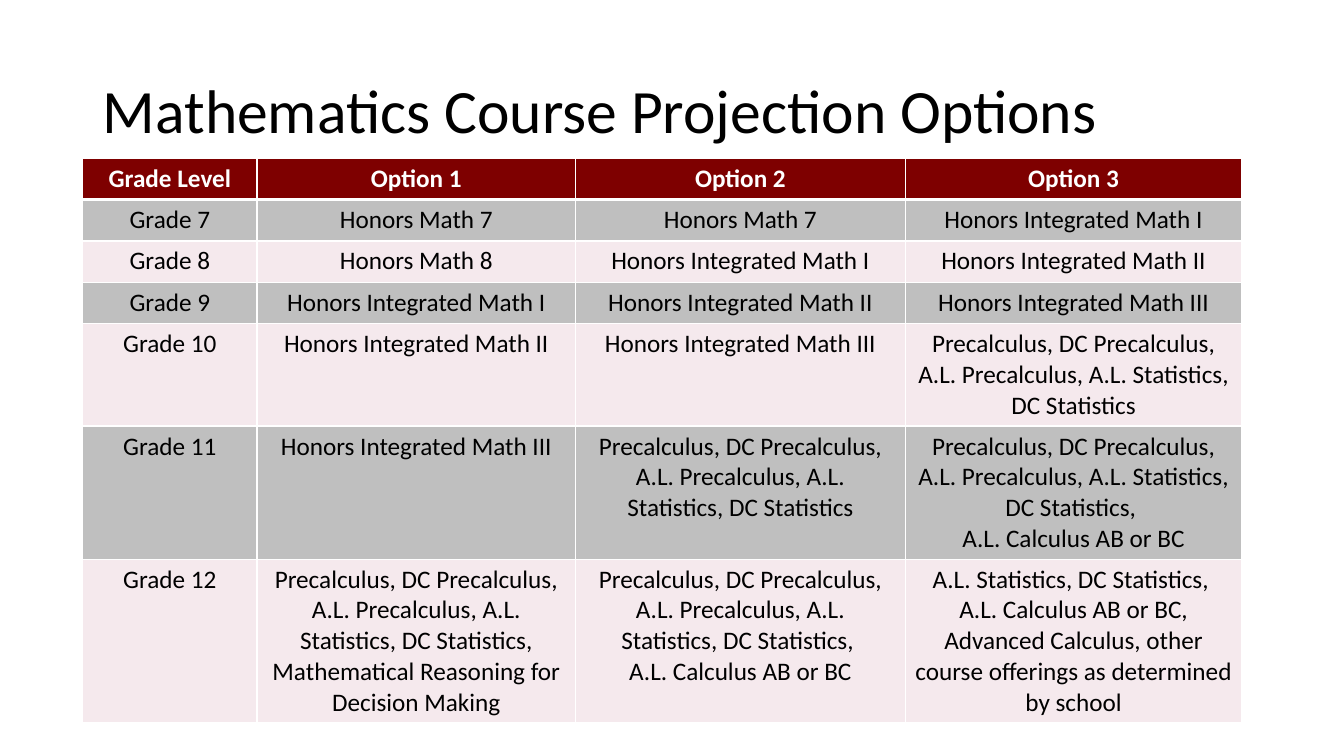
from lxml import etree
from pptx import Presentation
from pptx import util as u
from pptx.dml import color
from pptx.enum import text
from pptx.oxml import ns

SLIDE_WIDTH, SLIDE_HEIGHT = u.Inches(13.33), u.Inches(7.5)
FONT = "Calibri"
HEADER_FILL = "7E0000"
BAND_FILLS = ["BFBFBF", "F5E9ED"]
COLUMN_PERCENTS = [12.98, 23.7, 24.53, 25.05]
ROW_PERCENT = 5.47

MATH_1, MATH_2, MATH_3 = [f"Honors Integrated Math {level}" for level in ("I", "II", "III")]
PRECALCULUS = "Precalculus, DC Precalculus, A.L. Precalculus, A.L. Statistics, DC Statistics"
WITH_CALCULUS = PRECALCULUS + ", \nA.L. Calculus AB or BC"
COURSES = [
    ["Grade Level", "Option 1", "Option 2", "Option 3"],
    ["Grade 7", "Honors Math 7", "Honors Math 7", MATH_1],
    ["Grade 8", "Honors Math 8", MATH_1, MATH_2],
    ["Grade 9", MATH_1, MATH_2, MATH_3],
    ["Grade 10", MATH_2, MATH_3, PRECALCULUS],
    ["Grade 11", MATH_3, PRECALCULUS, WITH_CALCULUS],
    ["Grade 12", PRECALCULUS + ", Mathematical Reasoning for Decision Making", WITH_CALCULUS,
     "A.L. Statistics, DC Statistics, \nA.L. Calculus AB or BC, Advanced Calculus, "
     "other course offerings as determined by school"],
]


def across(percent):
    return round(SLIDE_WIDTH * percent / 100)


def down(percent):
    return round(SLIDE_HEIGHT * percent / 100)


def rgb(value):
    return color.RGBColor.from_string(value)


def add_run(paragraph, words, size, shade, bold=False):
    run = paragraph.add_run()
    run.text = words
    run.font.name = FONT
    run.font.size = u.Pt(size)
    run.font.bold = bold
    run.font.color.rgb = rgb(shade)


def add_title(slide, words):
    title = slide.shapes.title
    title.left, title.top = across(6.9), down(5.33)
    title.width, title.height = across(86.25), down(19.33)
    frame = title.text_frame
    frame.auto_size = text.MSO_AUTO_SIZE.NONE
    frame.vertical_anchor = text.MSO_ANCHOR.MIDDLE
    paragraph = frame.paragraphs[0]
    paragraph.alignment = text.PP_ALIGN.LEFT
    paragraph.line_spacing = 0.9
    add_run(paragraph, words, 44, "000000")


def set_borders(cell, widths):
    properties = cell._tc.get_or_add_tcPr()
    for side, width in widths.items():
        line = etree.SubElement(properties, ns.qn(f"a:ln{side}"), w=str(u.Pt(width)))
        fill = etree.SubElement(line, ns.qn("a:solidFill"))
        etree.SubElement(fill, ns.qn("a:srgbClr"), val="FFFFFF")


def fill_cell(cell, words, row):
    header = row == 0
    set_borders(cell, {"L": 1, "R": 1, "T": 3 if row == 1 else 1, "B": 3 if header else 1})
    cell.fill.solid()
    cell.fill.fore_color.rgb = rgb(HEADER_FILL if header else BAND_FILLS[(row - 1) % 2])
    frame = cell.text_frame
    for index, line in enumerate(words.split("\n")):
        paragraph = frame.add_paragraph() if index else frame.paragraphs[0]
        paragraph.alignment = text.PP_ALIGN.CENTER
        add_run(paragraph, line, 18, "FFFFFF" if header else "000000", header)


def add_course_table(slide, courses):
    shape = slide.shapes.add_table(
        len(courses), len(COLUMN_PERCENTS), across(6.15), down(20.93),
        across(sum(COLUMN_PERCENTS)), down(ROW_PERCENT * len(courses)))
    table = shape.table
    for column, percent in zip(table.columns, COLUMN_PERCENTS):
        column.width = across(percent)
    for row, entries in enumerate(courses):
        table.rows[row].height = down(ROW_PERCENT)
        for column, words in enumerate(entries):
            fill_cell(table.cell(row, column), words, row)
    shape.height = down(73.6)


def main():
    presentation = Presentation()
    presentation.slide_width, presentation.slide_height = SLIDE_WIDTH, SLIDE_HEIGHT
    slide = presentation.slides.add_slide(presentation.slide_layouts[5])
    slide.background.fill.solid()
    slide.background.fill.fore_color.rgb = rgb("FFFFFF")
    add_title(slide, "Mathematics Course Projection Options")
    add_course_table(slide, COURSES)
    presentation.save("out.pptx")


if __name__ == "__main__":
    main()
